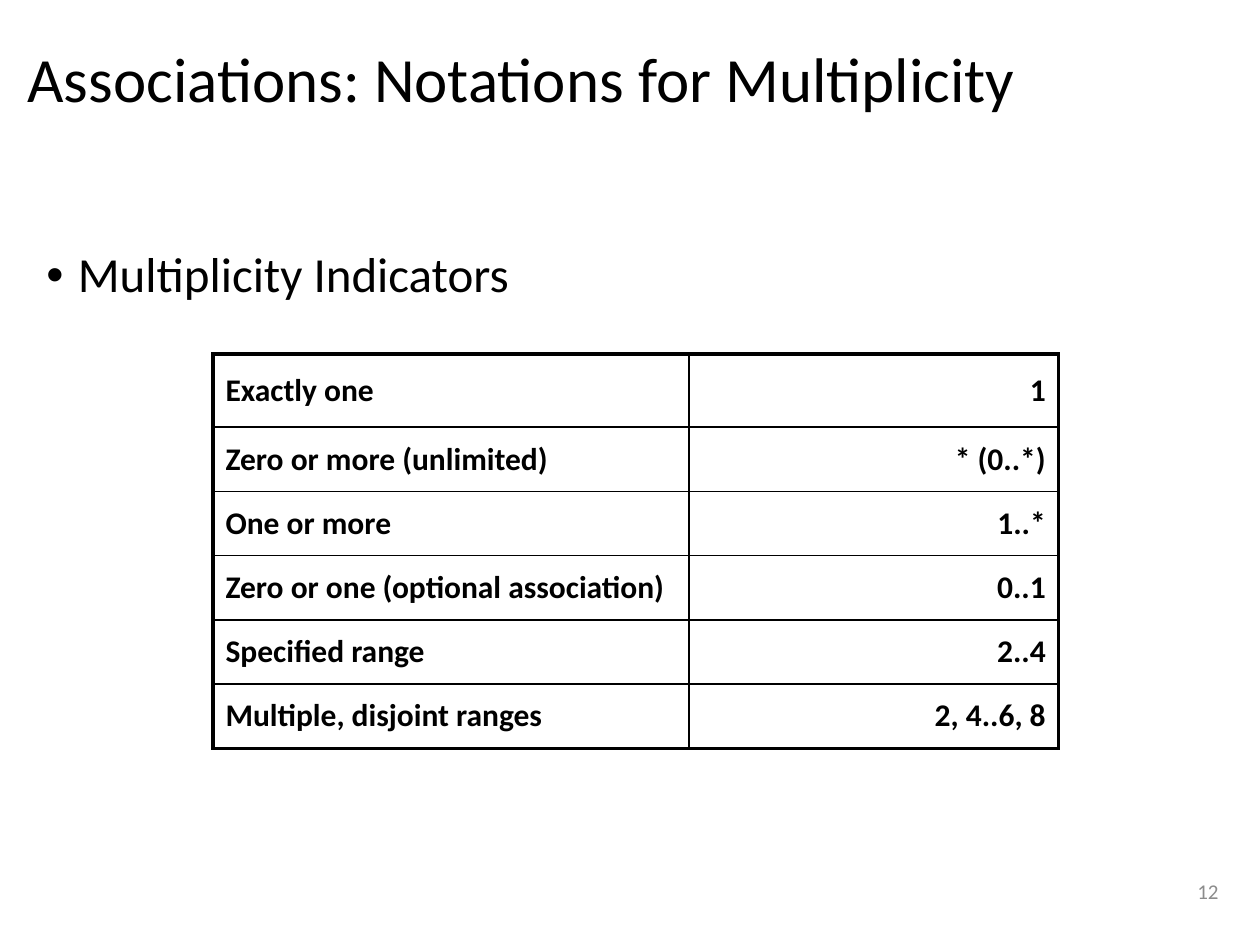
from lxml import etree
from pptx import Presentation
from pptx import util as u
from pptx.dml.color import RGBColor
from pptx.enum import text
from pptx.oxml import ns

MULTIPLICITIES = [
    ("Exactly one", "1"),
    ("Zero or more (unlimited)", "* (0..*)"),
    ("One or more", "1..*"),
    ("Zero or one (optional association)", "0..1"),
    ("Specified range", "2..4"),
    ("Multiple, disjoint ranges", "2, 4..6, 8"),
]


def color(hex_code):
    return RGBColor.from_string(hex_code)


class SlideBuilder:
    font_name = "Calibri"
    ink = "000000"
    muted = "8C8C8C"
    inner_line = 1
    outer_line = 2.25

    def __init__(self, slide):
        self.slide = slide

    def style(self, paragraph, size, ink=None, bold=False):
        font = paragraph.font
        font.name = self.font_name
        font.size = u.Pt(size)
        font.bold = bold
        font.color.rgb = color(ink or self.ink)

    def text_box(self, words, left, top, width, height, size, ink=None,
                 anchor=text.MSO_ANCHOR.MIDDLE, align=text.PP_ALIGN.LEFT,
                 line_spacing=None):
        box = self.slide.shapes.add_textbox(
            u.Inches(left), u.Inches(top), u.Inches(width), u.Inches(height))
        frame = box.text_frame
        frame.word_wrap = True
        frame.vertical_anchor = anchor
        paragraph = frame.paragraphs[0]
        paragraph.text = words
        paragraph.alignment = align
        paragraph.line_spacing = line_spacing
        self.style(paragraph, size, ink)
        return paragraph

    def bullet(self, words, left, top, width, height, size):
        paragraph = self.text_box(words, left, top, width, height, size,
                                  anchor=text.MSO_ANCHOR.TOP, line_spacing=0.9)
        paragraph.space_before = u.Pt(10)
        properties = paragraph._p.get_or_add_pPr()
        properties.set("marL", str(u.Inches(0.25)))
        properties.set("indent", str(u.Inches(-0.25)))
        defaults = properties.find(ns.qn("a:defRPr"))
        typeface = etree.Element(ns.qn("a:buFont"), typeface="Arial")
        mark = etree.Element(ns.qn("a:buChar"), char="•")
        defaults.addprevious(typeface)
        defaults.addprevious(mark)

    def borders(self, cell, outer_sides):
        properties = cell._tc.get_or_add_tcPr()
        for side in "LRTB":
            width = self.outer_line if side in outer_sides else self.inner_line
            line = etree.SubElement(properties, ns.qn(f"a:ln{side}"),
                                    w=str(u.Pt(width)))
            fill = etree.SubElement(line, ns.qn("a:solidFill"))
            etree.SubElement(fill, ns.qn("a:srgbClr"), val=self.ink)

    def table(self, rows, left, top, column_widths, row_heights, size):
        table = self.slide.shapes.add_table(
            len(rows), len(column_widths), u.Inches(left), u.Inches(top),
            u.Inches(sum(column_widths)), u.Inches(sum(row_heights))).table
        table.first_row = False
        table.horz_banding = False
        for column, width in zip(table.columns, column_widths):
            column.width = u.Inches(width)
        for row, height in zip(table.rows, row_heights):
            row.height = u.Inches(height)
        aligns = (text.PP_ALIGN.LEFT, text.PP_ALIGN.RIGHT)
        for r, values in enumerate(rows):
            edge = {0: "T", len(rows) - 1: "B"}.get(r, "")
            for c, value in enumerate(values):
                cell = table.cell(r, c)
                self.borders(cell, edge + "LR"[c])
                cell.fill.background()
                cell.vertical_anchor = text.MSO_ANCHOR.MIDDLE
                paragraph = cell.text_frame.paragraphs[0]
                paragraph.text = value
                paragraph.alignment = aligns[c]
                paragraph.space_before = u.Pt(0.2 * size)
                self.style(paragraph, size, bold=True)


def main():
    deck = Presentation()
    deck.slide_width = u.Inches(10)
    deck.slide_height = u.Inches(7.5)
    page = SlideBuilder(deck.slides.add_slide(deck.slide_layouts[6]))
    page.text_box("12", 7.44, 6.82, 2.33, 0.5, 12, page.muted,
                  align=text.PP_ALIGN.RIGHT)
    page.text_box("Associations: Notations for Multiplicity",
                  0.12, 0.13, 9, 1.05, 36, line_spacing=0.9)
    page.bullet("Multiplicity Indicators", 0.27, 1.94, 9.21, 5.04, 28)
    page.table(MULTIPLICITIES, 1.69, 2.81, [3.78, 2.93],
               [0.58] + [0.51] * (len(MULTIPLICITIES) - 1), 18)
    deck.save("out.pptx")


if __name__ == "__main__":
    main()
